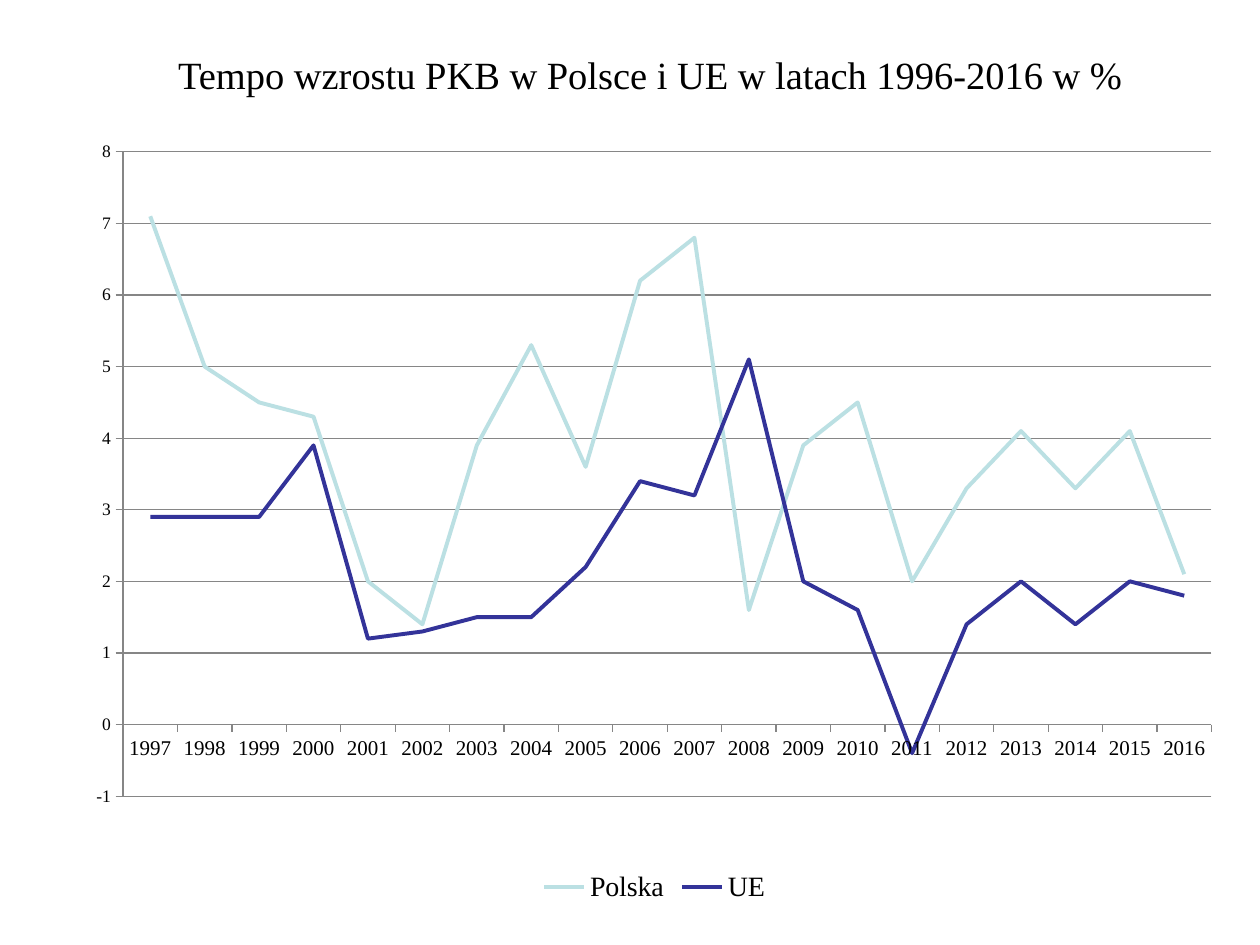
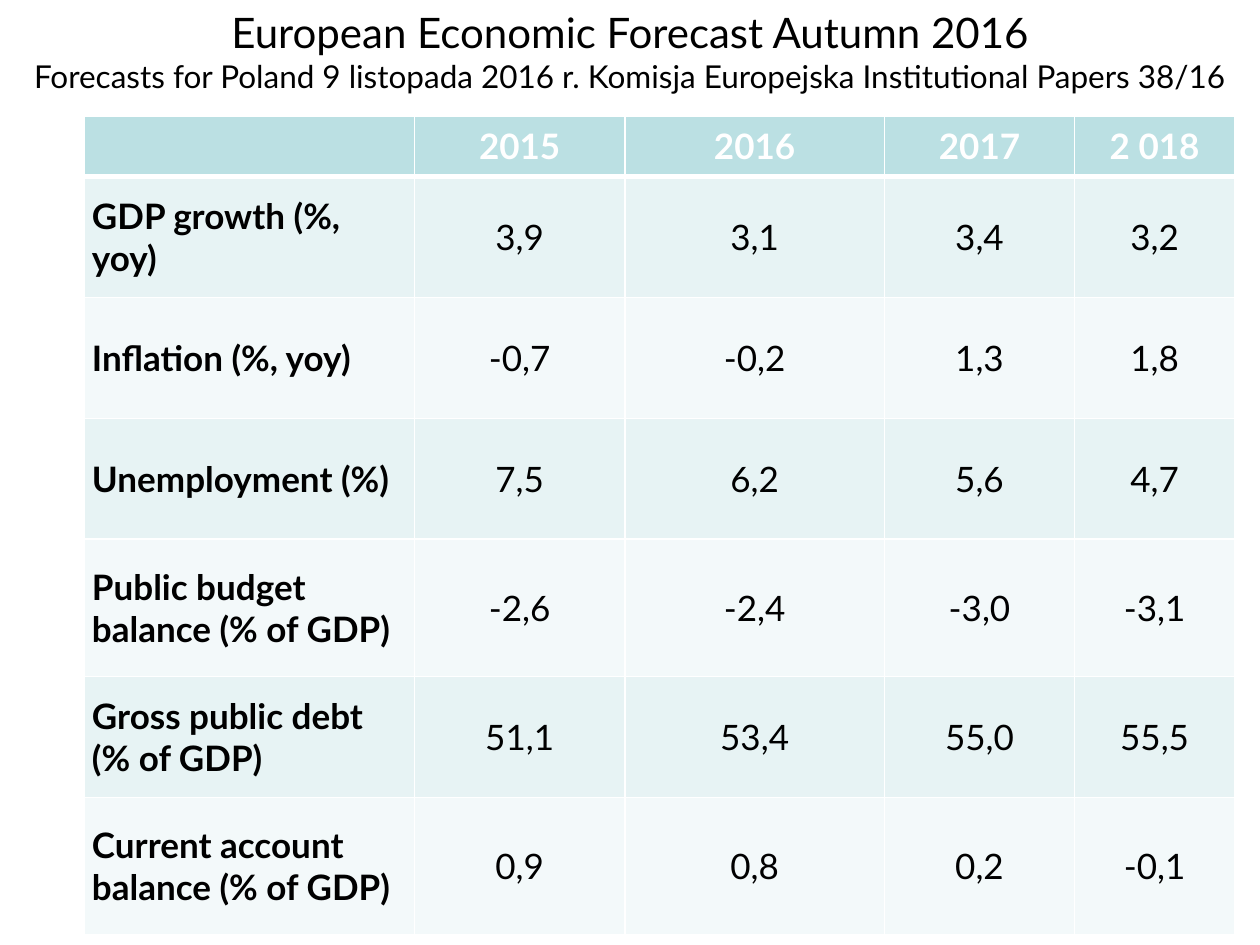
from lxml import etree
from pptx import Presentation
from pptx.chart.data import CategoryChartData
from pptx.dml.color import RGBColor
from pptx.enum.chart import XL_CHART_TYPE, XL_LEGEND_POSITION, XL_TICK_MARK
from pptx.enum.text import MSO_ANCHOR, PP_ALIGN
from pptx.oxml import parse_xml
from pptx.oxml.ns import nsdecls, qn
from pptx.util import Inches, Pt

COLORS = {
    "text": "000000",
    "white": "FFFFFF",
    "aqua": "BBE0E3",
    "navy": "333399",
    "band_dark": "E7F3F4",
    "band_light": "F3F9FA",
    "grid": "868686",
}
SERIF = "Times New Roman"
SANS = "Lato"

GDP_GROWTH = {
    "Polska": ("aqua", [7.1, 5, 4.5, 4.3, 2, 1.4, 3.9, 5.3, 3.6, 6.2,
                        6.8, 1.6, 3.9, 4.5, 2, 3.3, 4.1, 3.3, 4.1, 2.1]),
    "UE": ("navy", [2.9, 2.9, 2.9, 3.9, 1.2, 1.3, 1.5, 1.5, 2.2, 3.4,
                    3.2, 5.1, 2, 1.6, -0.4, 1.4, 2, 1.4, 2, 1.8]),
}
FORECAST = [
    ["", "2015", "2016", "2017", "2 018"],
    ["GDP growth (%, yoy)", "3,9", "3,1", "3,4", "3,2"],
    ["Inflation (%, yoy)", "-0,7", "-0,2", "1,3", "1,8"],
    ["Unemployment (%)", "7,5", "6,2", "5,6", "4,7"],
    ["Public budget balance (% of GDP)", "-2,6", "-2,4", "-3,0", "-3,1"],
    ["Gross public debt (% of GDP)", "51,1", "53,4", "55,0", "55,5"],
    ["Current account balance (% of GDP)", "0,9", "0,8", "0,2", "-0,1"],
]
COL_WIDTHS = [2.62, 1.67, 2.06, 1.51, 1.27]
ROW_HEIGHTS = [0.48, 0.96, 0.96, 0.96, 1.09, 0.96, 1.09]


def rgb(name):
    return RGBColor.from_string(COLORS[name])


class Deck:
    def __init__(self):
        self.prs = Presentation()
        self.prs.slide_width = Inches(10)
        self.prs.slide_height = Inches(7.5)
        self.s = None

    def new_slide(self):
        self.s = self.prs.slides.add_slide(self.prs.slide_layouts[6])

    def style(self, font, name, size, color="text", bold=False):
        font.name = name
        font.size = Pt(size)
        font.bold = bold
        font.color.rgb = rgb(color)

    def title(self, box, lines, font, top_inset=0.05):
        sp = self.s.shapes.add_textbox(*map(Inches, box))
        tf = sp.text_frame
        tf.word_wrap = True
        tf.vertical_anchor = MSO_ANCHOR.MIDDLE
        tf.margin_top = Inches(top_inset)
        tf.margin_bottom = Inches(0)
        tf.text = "\n".join(text for text, _ in lines)
        for p, (_, size) in zip(tf.paragraphs, lines):
            p.alignment = PP_ALIGN.CENTER
            self.style(p.runs[0].font, font, size)

    def line_chart(self, box, categories, series, plot):
        data = CategoryChartData()
        data.categories = categories
        for name, (_, values) in series.items():
            data.add_series(name, values)
        chart = self.s.shapes.add_chart(
            XL_CHART_TYPE.LINE, *map(Inches, box), data).chart
        self.style(chart.font, SERIF, 10)
        chart.has_title = False
        chart.has_legend = True
        chart.legend.position = XL_LEGEND_POSITION.BOTTOM
        chart.legend.include_in_layout = False
        self.style(chart.legend.font, SERIF, 16)
        chart.plots[0].vary_by_categories = False
        for ser, (color, _) in zip(chart.plots[0].series, series.values()):
            ser.smooth = False
            ser.format.line.width = Pt(2.25)
            ser.format.line.color.rgb = rgb(color)
        values_axis = chart.value_axis
        values_axis.minimum_scale, values_axis.maximum_scale = -1, 8
        values_axis.major_unit = 1
        values_axis.has_major_gridlines = True
        lines = [values_axis.major_gridlines.format.line]
        for axis, size in ((values_axis, 10), (chart.category_axis, 12)):
            axis.major_tick_mark = XL_TICK_MARK.OUTSIDE
            axis.minor_tick_mark = XL_TICK_MARK.NONE
            self.style(axis.tick_labels.font, SERIF, size)
            lines.append(axis.format.line)
        for line in lines:
            line.color.rgb = rgb("grid")
            line.width = Pt(0.75)
        self.place_plot(chart, plot)

    def place_plot(self, chart, plot):
        area = chart.plots[0]._element.getparent()
        for old in area.findall(qn("c:layout")):
            area.remove(old)
        layout = etree.Element(qn("c:layout"))
        manual = etree.SubElement(layout, qn("c:manualLayout"))
        settings = [("layoutTarget", "inner"), ("xMode", "edge"),
                    ("yMode", "edge"), *zip("xywh", plot)]
        for tag, val in settings:
            etree.SubElement(manual, qn(f"c:{tag}")).set("val", str(val))
        area.insert(0, layout)

    def borders(self, cell, widths):
        props = cell._tc.get_or_add_tcPr()
        for side, width in zip("LRTB", widths):
            props.append(parse_xml(
                f'<a:ln{side} {nsdecls("a")} w="{Pt(width)}"><a:solidFill>'
                f'<a:srgbClr val="{COLORS["white"]}"/></a:solidFill></a:ln{side}>'))

    def table(self, box, rows, col_widths, row_heights):
        table = self.s.shapes.add_table(
            len(rows), len(col_widths), *map(Inches, box)).table
        table.horz_banding = False
        for col, width in zip(table.columns, col_widths):
            col.width = Inches(width)
        for row, height in zip(table.rows, row_heights):
            row.height = Inches(height)
        for i, texts in enumerate(rows):
            header = i == 0
            fill = "aqua" if header else ("band_light", "band_dark")[i % 2]
            for j, text in enumerate(texts):
                cell = table.cell(i, j)
                self.borders(cell, (1, 1, 3 if i == 1 else 1, 3 if header else 1))
                cell.fill.solid()
                cell.fill.fore_color.rgb = rgb(fill)
                cell.vertical_anchor = MSO_ANCHOR.MIDDLE
                cell.margin_left = cell.margin_right = Inches(0.06)
                cell.margin_top = cell.margin_bottom = Inches(0.03)
                cell.text = text
                p = cell.text_frame.paragraphs[0]
                p.alignment = PP_ALIGN.CENTER if j else PP_ALIGN.LEFT
                for r in p.runs:
                    self.style(r.font, SANS, 20, "white" if header else "text",
                               header or j == 0)


def main():
    deck = Deck()

    deck.new_slide()
    deck.title((0.75, 0.21, 8.82, 0.71),
               [("Tempo wzrostu PKB w Polsce i UE w latach 1996-2016 w %", 22)], SERIF)
    deck.line_chart((0.59, 1.07, 9.21, 6.14), [str(y) for y in range(1997, 2017)],
                    GDP_GROWTH, (0.042, 0.022, 0.938, 0.833))

    deck.new_slide()
    deck.title((0, 0, 10, 0.76), [
        ("European Economic Forecast Autumn 2016", 24),
        ("Forecasts for Poland 9 listopada 2016 r. Komisja Europejska "
         "Institutional Papers 38/16", 18),
    ], SANS)
    deck.table((0.67, 0.92, sum(COL_WIDTHS), sum(ROW_HEIGHTS)),
               FORECAST, COL_WIDTHS, ROW_HEIGHTS)

    deck.prs.save("out.pptx")


if __name__ == "__main__":
    main()
